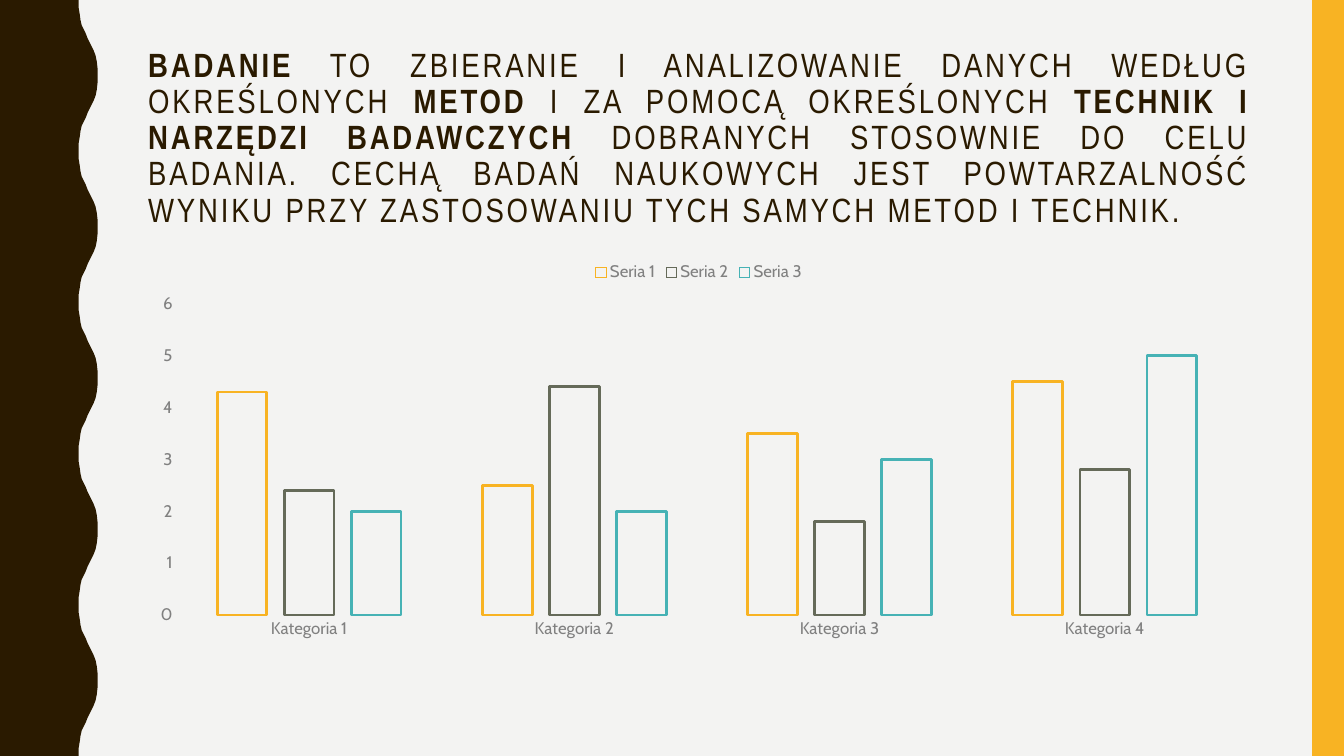
from dataclasses import dataclass

from pptx import Presentation
from pptx.chart.data import CategoryChartData
from pptx.dml.color import RGBColor
from pptx.enum.chart import XL_CHART_TYPE, XL_LEGEND_POSITION, XL_TICK_MARK
from pptx.enum.shapes import MSO_SHAPE
from pptx.enum.text import MSO_ANCHOR, MSO_AUTO_SIZE, PP_ALIGN
from pptx.util import Cm, Pt


@dataclass(frozen=True)
class Theme:
    paper: str = "F3F3F2"
    dark: str = "2A1A00"
    accent: str = "F8B323"
    label: str = "808080"
    series: tuple = ("F8B323", "656A59", "46B2B5")
    title_font: str = "Arial Narrow"
    chart_font: str = "Cabin"
    title_size: int = 24
    label_size: int = 12


PAGE_WIDTH, PAGE_HEIGHT = 33.87, 19.05
WAVE_PERIOD = 381
HALF_WAVE = [
    (198, 0), (198, 18), (201, 36), (203, 51), (206, 64),
    (211, 74), (216, 84), (221, 97), (226, 107), (231, 117),
    (236, 127), (241, 140), (244, 155), (246, 173), (246, 190),
]
TITLE = [
    ("BADANIE", True),
    (" TO ZBIERANIE I ANALIZOWANIE DANYCH WEDŁUG OKREŚLONYCH ", False),
    ("METOD", True),
    (" I ZA POMOCĄ OKREŚLONYCH ", False),
    ("TECHNIK I NARZĘDZI BADAWCZYCH ", True),
    ("DOBRANYCH STOSOWNIE DO CELU BADANIA. CECHĄ BADAŃ NAUKOWYCH JEST "
     "POWTARZALNOŚĆ WYNIKU PRZY ZASTOSOWANIU TYCH SAMYCH METOD I TECHNIK.", False),
]
CATEGORIES = [f"Kategoria {number}" for number in range(1, 5)]
SERIES = {
    "Seria 1": (4.3, 2.5, 3.5, 4.5),
    "Seria 2": (2.4, 4.4, 1.8, 2.8),
    "Seria 3": (2, 2, 3, 5),
}


def color(code):
    return RGBColor.from_string(code)


def format_font(font, *, name, size, code, bold=False):
    font.name, font.size, font.bold = name, Pt(size), bold
    font.color.rgb = color(code)


def add_span(para, text, *, spacing=0, **style):
    span = para.add_run()
    span.text = text
    format_font(span.font, **style)
    span.font._element.set("spc", str(spacing * 100))


class Page:
    """Draws the elements of one slide in a shared style."""

    def __init__(self, deck, theme):
        self.theme = theme
        self.slide = deck.slides.add_slide(deck.slide_layouts[5])
        fill = self.slide.background.fill
        fill.solid()
        fill.fore_color.rgb = color(theme.paper)

    def paint(self, shape, code):
        shape.shadow.inherit = False
        shape.fill.solid()
        shape.fill.fore_color.rgb = color(code)
        shape.line.fill.background()

    def wave(self):
        crest = HALF_WAVE + [(x, WAVE_PERIOD - y) for x, y in HALF_WAVE[-2::-1]]
        edge = [(x, y + WAVE_PERIOD * turn) for turn in range(5) for x, y in crest]
        builder = self.slide.shapes.build_freeform(0, 0, scale=Cm(0.01))
        builder.add_line_segments(edge + [(0, PAGE_HEIGHT * 100)], close=True)
        self.paint(builder.convert_to_shape(), self.theme.dark)

    def stripe(self, left, width):
        shape = self.slide.shapes.add_shape(
            MSO_SHAPE.RECTANGLE, Cm(left), 0, Cm(width), Cm(PAGE_HEIGHT))
        self.paint(shape, self.theme.accent)

    def title(self, spans, left, top, width, height):
        box = self.slide.shapes.title
        box.left, box.top, box.width, box.height = map(Cm, (left, top, width, height))
        frame = box.text_frame
        frame.word_wrap = True
        frame.auto_size = MSO_AUTO_SIZE.NONE
        frame.vertical_anchor = MSO_ANCHOR.MIDDLE
        para = frame.paragraphs[0]
        para.alignment = PP_ALIGN.JUSTIFY
        para.line_spacing = 0.9
        for text, bold in spans:
            add_span(para, text, bold=bold, spacing=2, name=self.theme.title_font,
                     size=self.theme.title_size, code=self.theme.dark)

    def column_chart(self, categories, series, left, top, width, height):
        data = CategoryChartData()
        data.categories = categories
        for name, values in series.items():
            data.add_series(name, values)
        chart = self.slide.shapes.add_chart(
            XL_CHART_TYPE.COLUMN_CLUSTERED,
            *map(Cm, (left, top, width, height)), data).chart
        chart.has_title = False
        format_font(chart.font, name=self.theme.chart_font,
                    size=self.theme.label_size, code=self.theme.label)
        chart.has_legend = True
        chart.legend.position = XL_LEGEND_POSITION.TOP
        chart.legend.include_in_layout = False
        for axis in (chart.category_axis, chart.value_axis):
            axis.has_major_gridlines = False
            axis.major_tick_mark = axis.minor_tick_mark = XL_TICK_MARK.NONE
            axis.format.line.fill.background()
        chart.value_axis.minimum_scale = 0
        chart.value_axis.maximum_scale = 6
        chart.value_axis.major_unit = 1
        plot = chart.plots[0]
        plot.vary_by_categories = False
        plot.gap_width, plot.overlap = 164, -35
        for columns, code in zip(plot.series, self.theme.series):
            columns.format.fill.background()
            columns.format.line.color.rgb = color(code)
            columns.format.line.width = Pt(2)


def main():
    deck = Presentation()
    deck.slide_width, deck.slide_height = Cm(PAGE_WIDTH), Cm(PAGE_HEIGHT)
    page = Page(deck, Theme())
    page.wave()
    page.stripe(33.07, 0.8)
    page.title(TITLE, 3.48, 1.07, 28.27, 4.85)
    page.column_chart(CATEGORIES, SERIES, 3.48, 6.32, 28.27, 9.98)
    deck.save("out.pptx")


if __name__ == "__main__":
    main()
